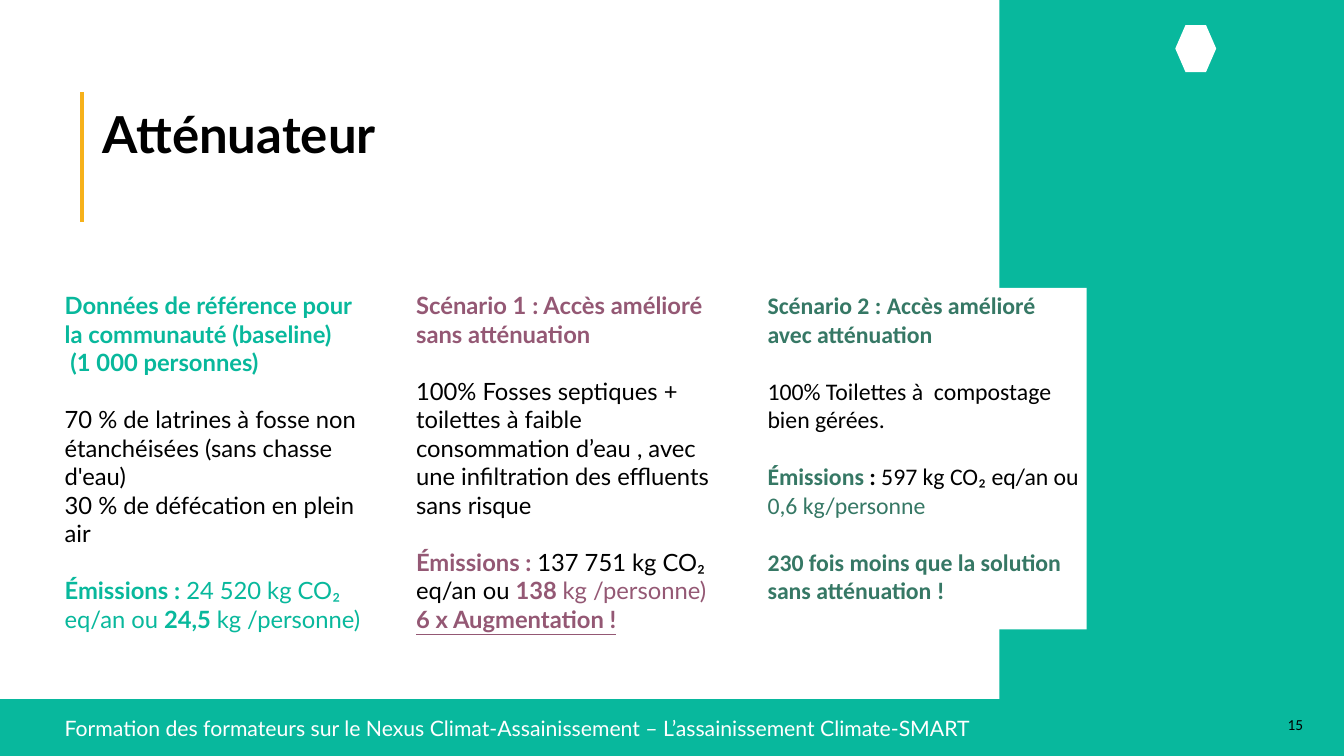
from lxml import etree
from pptx import Presentation
from pptx.dml.color import RGBColor
from pptx.enum import shapes, text
from pptx.oxml import ns
from pptx.util import Inches, Pt

WIDTH, HEIGHT = 21.99, 12.37
TEAL = RGBColor(0x08, 0xB8, 0x9D)
BASELINE = RGBColor(0x08, 0xB8, 0x9C)
PLUM = RGBColor(0x94, 0x58, 0x74)
GREEN = RGBColor(0x36, 0x78, 0x65)
AMBER = RGBColor(0xF6, 0xB1, 0x1A)
BLACK = RGBColor(0, 0, 0)
WHITE = RGBColor(0xFF, 0xFF, 0xFF)
LINE_GAP = 33.6  # one line of 28 pt text

# Each paragraph: (starts a new group, [(words, colour, bold, underlined), ...])
BASELINE_TEXT = [
    (False, [("Données de référence pour la communauté (baseline)", BASELINE, True, False)]),
    (False, [(" (1 000 personnes)", BASELINE, True, False)]),
    (True, [("70 % de latrines à fosse non étanchéisées (sans chasse d'eau)", BLACK, False, False)]),
    (False, [("30 % de défécation en plein air", BLACK, False, False)]),
    (True, [("Émissions :", BASELINE, True, False),
            (" 24 520 kg CO₂ eq/an ou ", BASELINE, False, False),
            ("24,5 ", BASELINE, True, False),
            ("kg /personne)", BASELINE, False, False)]),
]
SCENARIO_1_TEXT = [
    (False, [("Scénario 1 : Accès amélioré sans atténuation", PLUM, True, False)]),
    (True, [("100% Fosses septiques + toilettes à faible consommation d’eau , "
             "avec une infiltration des effluents sans risque", BLACK, False, False)]),
    (True, [("Émissions : ", PLUM, True, False),
            ("137 751 kg CO₂ eq/an ou ", BLACK, False, False),
            ("138 ", PLUM, True, False),
            ("kg /personne)", PLUM, False, False)]),
    (False, [("6 x Augmentation !", PLUM, True, True)]),
]
SCENARIO_2_TEXT = [
    (False, [("Scénario 2 : Accès amélioré avec atténuation", GREEN, True, False)]),
    (True, [("100% Toilettes à  compostage bien gérées.", BLACK, False, False)]),
    (True, [("Émissions ", GREEN, True, False),
            (":", BLACK, True, False),
            (" 597 kg CO₂ eq/an ou ", BLACK, False, False),
            ("0,6 kg/personne", GREEN, False, False)]),
    (True, [("230 fois moins que la solution sans atténuation !", GREEN, True, False)]),
]


def add_block(page, box, colour, kind=shapes.MSO_SHAPE.RECTANGLE):
    block = page.shapes.add_shape(kind, *map(Inches, box))
    block.shadow.inherit = False
    block.fill.solid()
    block.fill.fore_color.rgb = colour
    block.line.fill.background()
    return block


def add_textbox(page, box):
    return page.shapes.add_textbox(*map(Inches, box))


def set_frame(shape):
    frame = shape.text_frame
    frame.word_wrap = True
    frame.auto_size = text.MSO_AUTO_SIZE.NONE
    frame.vertical_anchor = text.MSO_ANCHOR.TOP
    frame.margin_left = frame.margin_right = Inches(0.1)
    frame.margin_top = frame.margin_bottom = Inches(0.05)
    return frame


def add_span(para, words, font, size, colour, bold=False, underlined=False):
    span = para.add_run()
    span.text = words
    span.font.name = font
    span.font.size = Pt(size)
    span.font.color.rgb = colour
    span.font.bold = bold
    span.font.underline = underlined


def add_line(shape, words, font, size, colour, bold=False, align=text.PP_ALIGN.LEFT):
    para = set_frame(shape).paragraphs[0]
    para.alignment = align
    add_span(para, words, font, size, colour, bold)


def add_background(page):
    panel_left = 16.35
    add_block(page, (panel_left, 0, WIDTH - panel_left, HEIGHT), TEAL)
    add_block(page, (19.23, 0.41, 0.67, 0.77), WHITE, shapes.MSO_SHAPE.HEXAGON)


def add_heading(page, box):
    left, top, width, height = box
    # Amber rule beside the title
    rule = page.shapes.add_connector(shapes.MSO_CONNECTOR.STRAIGHT, Inches(left), Inches(top),
                                     Inches(left), Inches(top + height))
    rule.line.color.rgb = AMBER
    rule.line.width = Pt(4.95)
    etree.SubElement(rule.element.spPr, ns.qn("a:effectLst"))
    # Title
    title = page.shapes.title
    title.left, title.top = Inches(left + 0.24), Inches(top + 0.11)
    title.width, title.height = Inches(width - 0.24), Inches(1.11)
    add_line(title, "Atténuateur", "Lato", 60, BLACK, bold=True)


def add_column(shape, font, paragraphs):
    frame = set_frame(shape)
    for index, (new_group, spans) in enumerate(paragraphs):
        para = frame.add_paragraph() if index else frame.paragraphs[0]
        para.alignment = text.PP_ALIGN.LEFT
        para.space_before = Pt(LINE_GAP if new_group else 0)
        for words, colour, bold, underlined in spans:
            add_span(para, words, font, 28, colour, bold, underlined)


def add_columns(page, left, top):
    pitch = 5.75
    add_column(add_textbox(page, (left, top, 5.08, 6.06)), "Lato", BASELINE_TEXT)
    add_column(add_textbox(page, (left + pitch, top, 5.32, 6.06)), "Lato", SCENARIO_1_TEXT)
    add_column(add_block(page, (left + 2 * pitch, top, 5.32, 5.59), WHITE),
               "Calibri", SCENARIO_2_TEXT)


def add_footer(page, box):
    left, top, width, height = box
    add_block(page, box, TEAL)
    add_line(add_textbox(page, (left + 0.96, top + 0.22, 19.04, 0.52)),
             "Formation des formateurs sur le Nexus Climat-Assainissement – "
             "L’assainissement Climate-SMART", "Lato", 25, WHITE)
    # Page number
    add_line(add_textbox(page, (left + width - 5.63, top + 0.21, 5.06, 0.3)),
             "15", "Calibri", 18, BLACK, align=text.PP_ALIGN.RIGHT)


def main():
    deck = Presentation()
    deck.slide_width, deck.slide_height = Inches(WIDTH), Inches(HEIGHT)
    page = deck.slides.add_slide(deck.slide_layouts.get_by_name("Title Only"))
    add_background(page)
    add_footer(page, (0, 11.44, WIDTH, HEIGHT - 11.44))
    add_heading(page, (1.34, 1.51, 11.23, 2.12))
    add_columns(page, 0.96, 4.71)
    deck.save("out.pptx")


if __name__ == "__main__":
    main()
